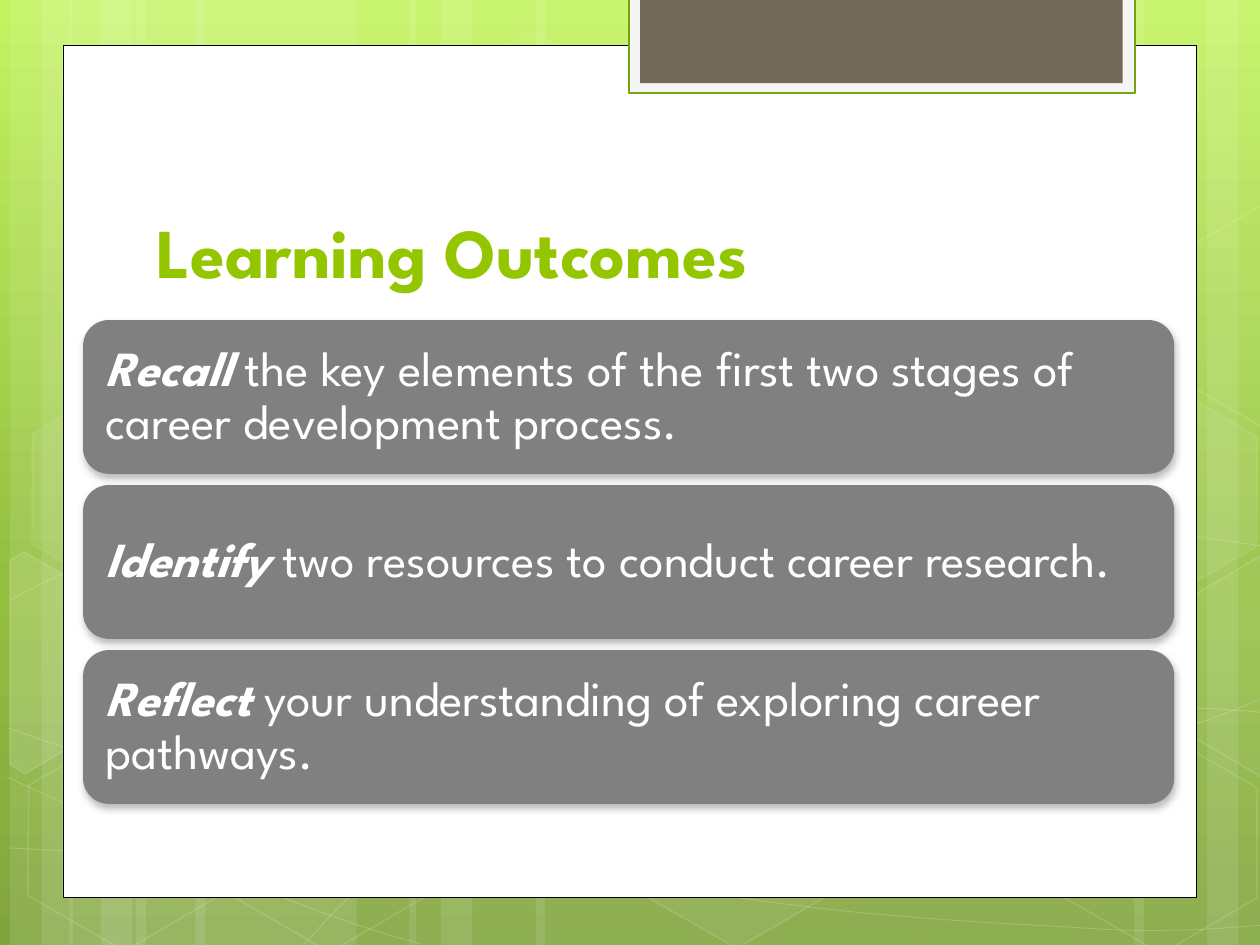
from copy import deepcopy
from dataclasses import dataclass

from lxml import etree
from pptx import Presentation, util as u
from pptx.dml.color import RGBColor
from pptx.enum import shapes, text
from pptx.oxml import ns


@dataclass(frozen=True)
class Theme:
    font: str = "League Spartan"
    title_size: int = 40
    body_size: int = 28
    green: str = "94C600"
    border_green: str = "74A510"
    white: str = "FFFFFF"
    black: str = "000000"
    tab_frame: str = "F5F5F5"
    tab: str = "71685A"
    card: str = "808080"
    backdrop: tuple = ((0, "C3F35F"), (0.62, "93BF3F"), (1, "81A53E"))


THEME = Theme()
SHAPE = shapes.MSO_SHAPE

# Stripes: left, width
STRIPES = [(1.08, 1.75), (0.08, 0.5), (0.33, 0.83), (1.55, 1.75), (0.55, 0.5), (0.8, 0.83),
           (7.33, 1.75), (9.58, 0.5), (9, 0.83), (4.25, 3.08), (3.25, 0.5), (3.5, 0.83)]

# Waves: start point, then two control points and an end point per cubic curve
WAVES = [
    [(0.07, 6.73), (0.61, 6.76), (1.15, 6.79), (1.9, 6.78), (2.65, 6.77), (3.58, 6.75),
     (4.58, 6.65), (5.58, 6.55), (7, 6.36), (7.92, 6.17), (8.83, 5.98), (9.77, 5.68),
     (10.07, 5.51)],
    [(0.07, 4.77), (0.36, 4.61), (0.65, 4.46), (1.21, 4.31), (1.78, 4.16), (2.59, 3.94),
     (3.47, 3.87), (4.36, 3.8), (5.44, 3.79), (6.54, 3.87), (7.64, 3.95), (9.47, 4.26),
     (10.07, 4.34)],
    [(0.06, 6.17), (1.27, 6.72), (2.47, 7.27), (3.34, 7.49)],
    [(0.07, 5.78), (0.38, 5.89), (0.7, 6), (1.28, 6.16), (1.86, 6.31), (2.73, 6.56),
     (3.57, 6.73), (4.4, 6.9), (5.45, 7.08), (6.28, 7.18), (7.11, 7.29), (8, 7.33),
     (8.53, 7.36), (9.05, 7.4), (9.19, 7.38), (9.45, 7.38), (9.71, 7.37), (9.89, 7.35),
     (10.07, 7.34)],
    [(2.42, 7.49), (2.6, 7.29), (2.78, 7.09), (3.02, 6.91), (3.26, 6.73), (3.6, 6.53),
     (3.88, 6.39), (4.16, 6.25), (4.33, 6.19), (4.7, 6.09), (5.06, 5.99), (5.73, 5.85),
     (6.08, 5.78), (6.44, 5.71), (6.49, 5.71), (6.8, 5.69), (7.11, 5.66), (7.6, 5.63),
     (7.94, 5.62), (8.29, 5.61), (8.86, 5.62), (8.86, 5.62), (9.08, 5.62), (9.31, 5.62),
     (9.53, 5.62), (9.71, 5.63), (9.88, 5.64), (9.97, 5.65), (10.06, 5.66), (10.03, 5.65),
     (10.06, 5.66)],
]

# Hexagons: left, top, fill opacity, line opacity
HEXAGONS = [(3.34, 0.36, 4, 8), (4.97, 5.89, 6, 12), (0.11, 5.91, 0, 12), (0.14, 3.12, 7, 8),
            (1.74, 5.92, 0, 12), (7.53, 4.53, 10, 12), (8.34, 5.93, 0, 12), (8.34, 3.14, 7, 8)]

# Hexagons cut by the slide edge: fill opacity, corners
CUT_HEXAGONS = [
    (10, [(0.08, 4.45), (0.19, 4.38), (0.96, 4.82), (0.95, 5.7), (0.2, 6.14), (0.08, 6.07)]),
    (4, [(9.26, 4.85), (10.01, 4.41), (10.09, 4.46), (10.09, 6.13), (10.02, 6.17), (9.26, 5.73)]),
    (0, [(9.26, 2.07), (10.01, 1.63), (10.1, 1.68), (10.09, 3.35), (10.02, 3.39), (9.26, 2.95)]),
]

OUTCOMES = [
    ("Recall ", "the key elements of the first two stages of career development process."),
    ("Identify", " two resources to conduct career research."),
    ("Reflect ", "your understanding of exploring career pathways."),
]


def set_alpha(color_parent, percent):
    color = color_parent.find(".//" + ns.qn("a:srgbClr"))
    etree.SubElement(color, ns.qn("a:alpha"), val=str(percent * 1000))


def paint(shape, fill=None, line=None, width=1.0, fill_alpha=100, line_alpha=100):
    """Set fill and line; opacities are percentages."""
    shape.shadow.inherit = False
    if fill and fill_alpha:
        shape.fill.solid()
        shape.fill.fore_color.rgb = RGBColor.from_string(fill)
        if fill_alpha < 100:
            set_alpha(shape._element.spPr.find(ns.qn("a:solidFill")), fill_alpha)
    else:
        shape.fill.background()
    if line:
        shape.line.color.rgb = RGBColor.from_string(line)
        shape.line.width = u.Pt(width)
        if line_alpha < 100:
            set_alpha(shape._element.spPr.find(ns.qn("a:ln")), line_alpha)
    else:
        shape.line.fill.background()
    return shape


def add_box(slide, kind, box, **look):
    return paint(slide.shapes.add_shape(kind, *map(u.Inches, box)), **look)


def add_outline(slide, points, closed, **look):
    corners = [(u.Inches(x), u.Inches(y)) for x, y in points]
    builder = slide.shapes.build_freeform(*corners[0])
    builder.add_line_segments(corners[1:], close=closed)
    return paint(builder.convert_to_shape(), **look)


def add_wave(slide, points, **look):
    """Outline whose points after the first are read in threes as cubic curves."""
    wave = add_outline(slide, points, False, **look)
    segments = list(wave._element.iter(ns.qn("a:lnTo")))
    for i in range(0, len(segments), 3):
        curve = etree.Element(ns.qn("a:cubicBezTo"))
        segments[i].addprevious(curve)
        for segment in segments[i:i + 3]:
            curve.append(segment[0])
            segment.getparent().remove(segment)


def add_run(paragraph, words, size, color, bold=False, italic=False):
    run = paragraph.add_run()
    run.text = words
    font = run.font
    font.name, font.size, font.bold, font.italic = THEME.font, u.Pt(size), bold, italic
    font.color.rgb = RGBColor.from_string(color)


def add_backdrop(slide, height):
    # Three-stop gradient
    fill = slide.background.fill
    fill.gradient()
    fill.gradient_angle = 270
    stops = slide._element.find(".//" + ns.qn("a:gsLst"))
    stops.append(deepcopy(stops[-1]))
    for stop, (position, color) in zip(fill.gradient_stops, THEME.backdrop):
        stop.position = position
        stop.color.rgb = RGBColor.from_string(color)

    # Stripes, waves and hexagons
    white = THEME.white
    for left, width in STRIPES:
        add_box(slide, SHAPE.RECTANGLE, (left, 0, width, height), fill=white, fill_alpha=10)
    for points in WAVES:
        add_wave(slide, points, line=white, width=0.5, line_alpha=20)
    for left, top, fill_alpha, line_alpha in HEXAGONS:
        hexagon = add_box(slide, SHAPE.HEXAGON, (left, top, 1.75, 1.52), fill=white, line=white,
                          fill_alpha=fill_alpha, line_alpha=line_alpha)
        hexagon.adjustments[0] = 0.285
        hexagon.rotation = 30
    for fill_alpha, corners in CUT_HEXAGONS:
        add_outline(slide, corners, True, fill=white, line=white,
                    fill_alpha=fill_alpha, line_alpha=12)


def add_panel(slide, box):
    left, top, width, _ = box
    add_box(slide, SHAPE.RECTANGLE, box, fill=THEME.white, line=THEME.black, width=0.5)
    # Tab hanging from the top edge
    tab_left, tab_top = left + width - 4.51, top - 0.38
    add_box(slide, SHAPE.RECTANGLE, (tab_left, tab_top, 4.02, 0.76),
            fill=THEME.tab_frame, line=THEME.border_green, width=1.25)
    add_box(slide, SHAPE.RECTANGLE, (tab_left + 0.09, tab_top, 3.83, 0.68), fill=THEME.tab)


def move_to_layout(slide):
    """Make the decoration part of the layout, behind its placeholders."""
    layout_tree = slide.slide_layout.shapes._spTree
    decoration = [shape for shape in slide.shapes if not shape.is_placeholder]
    for position, shape in enumerate(decoration, start=2):
        shape._element.nvSpPr.cNvPr.set("id", str(100 + position))
        layout_tree.insert(position, shape._element)


def add_title(slide, box, words):
    title = slide.shapes.title
    title.left, title.top, title.width, title.height = map(u.Inches, box)
    frame = title.text_frame
    frame.auto_size = text.MSO_AUTO_SIZE.NONE
    frame.vertical_anchor = text.MSO_ANCHOR.BOTTOM
    frame.paragraphs[0].alignment = text.PP_ALIGN.LEFT
    add_run(frame.paragraphs[0], words, THEME.title_size, THEME.green, bold=True)


def add_soft_shadow(shape):
    effects = shape._element.spPr.find(ns.qn("a:effectLst"))
    shadow = etree.SubElement(effects, ns.qn("a:outerShdw"), blurRad=str(u.Pt(4)),
                              dist=str(u.Pt(2)), dir="5400000", rotWithShape="0")
    etree.SubElement(shadow, ns.qn("a:srgbClr"), val=THEME.black)
    set_alpha(shadow, 28)


def add_outcomes(slide, box, outcomes, gap=0.09):
    left, top, width, height = box
    card_height = (height + gap) / len(outcomes) - gap
    for i, (verb, rest) in enumerate(outcomes):
        card = add_box(slide, SHAPE.ROUNDED_RECTANGLE,
                       (left, top + i * (card_height + gap), width, card_height), fill=THEME.card)
        add_soft_shadow(card)
        frame = card.text_frame
        frame.word_wrap = True
        frame.vertical_anchor = text.MSO_ANCHOR.MIDDLE
        frame.margin_left = frame.margin_right = u.Inches(0.12)
        frame.margin_top = frame.margin_bottom = u.Inches(0.12)
        paragraph = frame.paragraphs[0]
        paragraph.alignment = text.PP_ALIGN.LEFT
        paragraph.line_spacing = 0.9
        add_run(paragraph, verb, THEME.body_size, THEME.white, bold=True, italic=True)
        add_run(paragraph, rest, THEME.body_size, THEME.white)


def main():
    deck = Presentation()
    deck.slide_width, deck.slide_height = u.Inches(10), u.Inches(7.5)
    slide = deck.slides.add_slide(deck.slide_layouts[5])
    add_backdrop(slide, 7.5)
    add_panel(slide, (0.5, 0.36, 9, 6.76))
    move_to_layout(slide)
    add_title(slide, (1.14, 1.12, 7.68, 1.25), "Learning Outcomes")
    add_outcomes(slide, (0.66, 2.54, 8.66, 3.84), OUTCOMES)
    deck.save("out.pptx")


if __name__ == "__main__":
    main()
